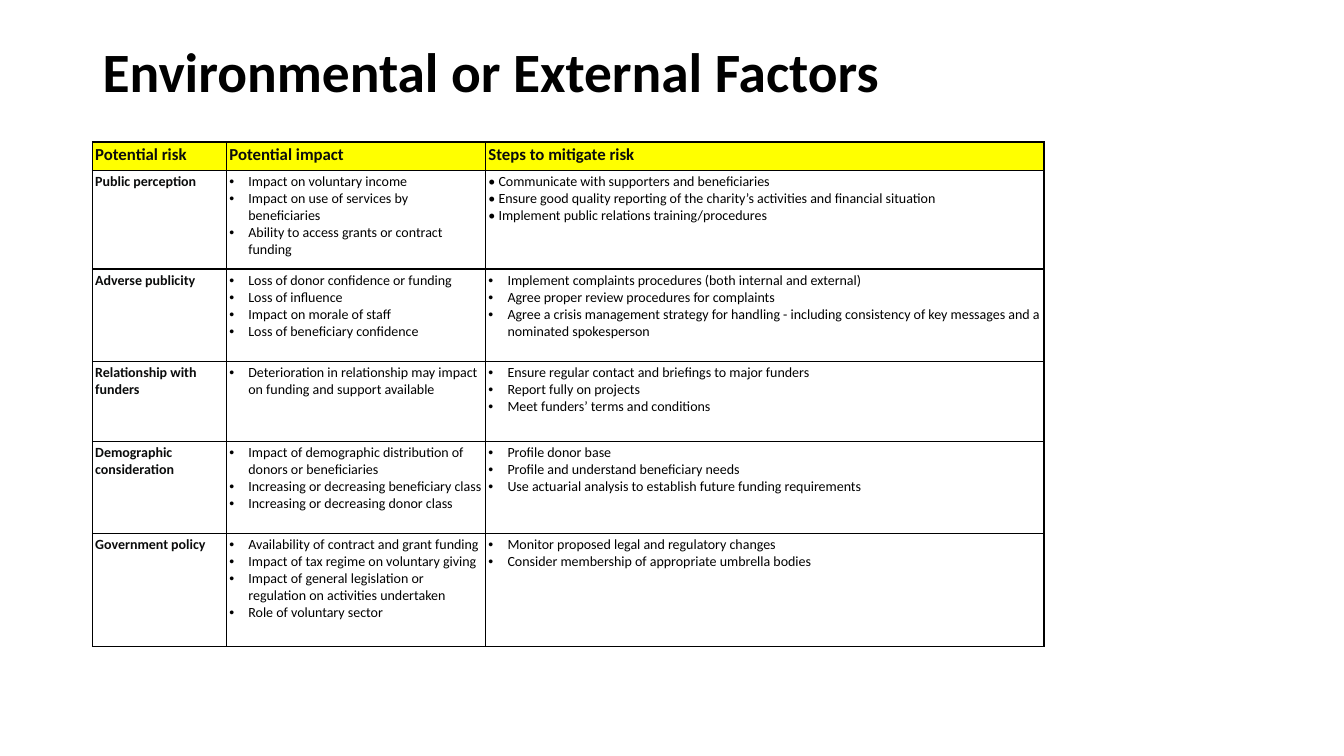
from copy import deepcopy

from lxml import etree
from pptx import Presentation
from pptx import util as u
from pptx.dml.color import RGBColor
from pptx.enum import text
from pptx.oxml.ns import qn

TITLE = "Environmental or External Factors"
HEADINGS = ["Potential risk", "Potential impact", "Steps to mitigate risk"]
# Each risk: name, impacts, steps. A plain string is one unbulleted paragraph.
RISKS = [
    ("Public perception",
     ["Impact on voluntary income",
      "Impact on use of services by beneficiaries",
      "Ability to access grants or contract funding"],
     "• Communicate with supporters and beneficiaries\v"
     "• Ensure good quality reporting of the charity’s activities and financial situation\v"
     "• Implement public relations training/procedures"),
    ("Adverse publicity",
     ["Loss of donor confidence or funding",
      "Loss of influence",
      "Impact on morale of staff",
      "Loss of beneficiary confidence"],
     ["Implement complaints procedures (both internal and external)",
      "Agree proper review procedures for complaints",
      "Agree a crisis management strategy for handling - including consistency "
      "of key messages and a nominated spokesperson"]),
    ("Relationship with funders",
     ["Deterioration in relationship may impact on funding and support available"],
     ["Ensure regular contact and briefings to major funders",
      "Report fully on projects",
      "Meet funders’ terms and conditions"]),
    ("Demographic consideration",
     ["Impact of demographic distribution of donors or beneficiaries",
      "Increasing or decreasing beneficiary class",
      "Increasing or decreasing donor class"],
     ["Profile donor base",
      "Profile and understand beneficiary needs",
      "Use actuarial analysis to establish future funding requirements"]),
    ("Government policy",
     ["Availability of contract and grant funding",
      "Impact of tax regime on voluntary giving",
      "Impact of general legislation or regulation on activities undertaken",
      "Role of voluntary sector"],
     ["Monitor proposed legal and regulatory changes",
      "Consider membership of appropriate umbrella bodies"]),
]
COLORS = {"title": "000000", "label": "0B0C0C", "body": "000000",
          "header": "FFFF00", "cell": "FFFFFF", "border": "000000"}
FONT = "Calibri"
LEFT = u.Cm(2.33)
COLUMN_WIDTHS = [u.Cm(3.38), u.Cm(6.53), u.Cm(14.07)]
ROW_HEIGHTS = [u.Cm(0.72), u.Cm(2.48), u.Cm(2.32), u.Cm(2.02), u.Cm(2.32), u.Cm(2.86)]
CELL_MARGIN = u.Cm(0.07)
BULLET_INDENT = u.Cm(0.48)


def write(para, words, size, color, bold=False, bullet=False):
    para.text = words
    para.alignment = text.PP_ALIGN.LEFT
    for span in para.runs:
        span.font.name = FONT
        span.font.size = u.Pt(size)
        span.font.bold = bold
        span.font.color.rgb = RGBColor.from_string(COLORS[color])
    for line_break in para._p.findall(qn("a:br")):
        line_break.append(deepcopy(para.runs[0]._r.rPr))
    if bullet:
        properties = para._p.get_or_add_pPr()
        properties.set("marL", str(BULLET_INDENT))
        properties.set("indent", str(-BULLET_INDENT))
        etree.SubElement(properties, qn("a:buFont")).set("typeface", "Arial")
        etree.SubElement(properties, qn("a:buChar")).set("char", "•")


def add_borders(cell):
    properties = cell._tc.get_or_add_tcPr()
    for position, side in enumerate(("a:lnL", "a:lnR", "a:lnT", "a:lnB")):
        line = etree.Element(qn(side), w=str(u.Pt(1)))
        fill = etree.SubElement(line, qn("a:solidFill"))
        etree.SubElement(fill, qn("a:srgbClr")).set("val", COLORS["border"])
        properties.insert(position, line)


def fill_cell(cell, content, fill, **style):
    """Write a string as one paragraph, or a list as bullets."""
    cell.margin_left = cell.margin_right = CELL_MARGIN
    cell.margin_top = cell.margin_bottom = CELL_MARGIN
    cell.vertical_anchor = text.MSO_ANCHOR.TOP
    cell.fill.solid()
    cell.fill.fore_color.rgb = RGBColor.from_string(COLORS[fill])
    add_borders(cell)
    bulleted = isinstance(content, list)
    frame = cell.text_frame
    for index, words in enumerate(content if bulleted else [content]):
        para = frame.add_paragraph() if index else frame.paragraphs[0]
        write(para, words, bullet=bulleted, **style)


def add_title(page):
    title = page.shapes.title
    title.left, title.top = LEFT, u.Cm(1.02)
    title.width, title.height = u.Cm(29.24), u.Cm(1.73)
    frame = title.text_frame
    frame.auto_size = text.MSO_AUTO_SIZE.NONE
    frame.vertical_anchor = text.MSO_ANCHOR.MIDDLE
    frame.paragraphs[0].line_spacing = 0.9
    write(frame.paragraphs[0], TITLE, size=39.6, color="title", bold=True)


def add_risk_table(page):
    table = page.shapes.add_table(
        len(ROW_HEIGHTS), len(COLUMN_WIDTHS), LEFT, u.Cm(3.58),
        sum(COLUMN_WIDTHS), sum(ROW_HEIGHTS)).table
    table.horz_banding = False
    for column, width in zip(table.columns, COLUMN_WIDTHS):
        column.width = width
    for row, height in zip(table.rows, ROW_HEIGHTS):
        row.height = height
    for column, heading in enumerate(HEADINGS):
        fill_cell(table.cell(0, column), heading, "header",
                  size=12, color="label", bold=True)
    for row, risk in enumerate(RISKS, start=1):
        for column, content in enumerate(risk):
            is_name = column == 0
            fill_cell(table.cell(row, column), content, "cell", size=10,
                      color="label" if is_name else "body", bold=is_name)


def main():
    deck = Presentation()
    deck.slide_width, deck.slide_height = u.Cm(33.87), u.Cm(19.05)
    page = deck.slides.add_slide(deck.slide_layouts[5])
    add_title(page)
    add_risk_table(page)
    deck.save("out.pptx")


if __name__ == "__main__":
    main()
